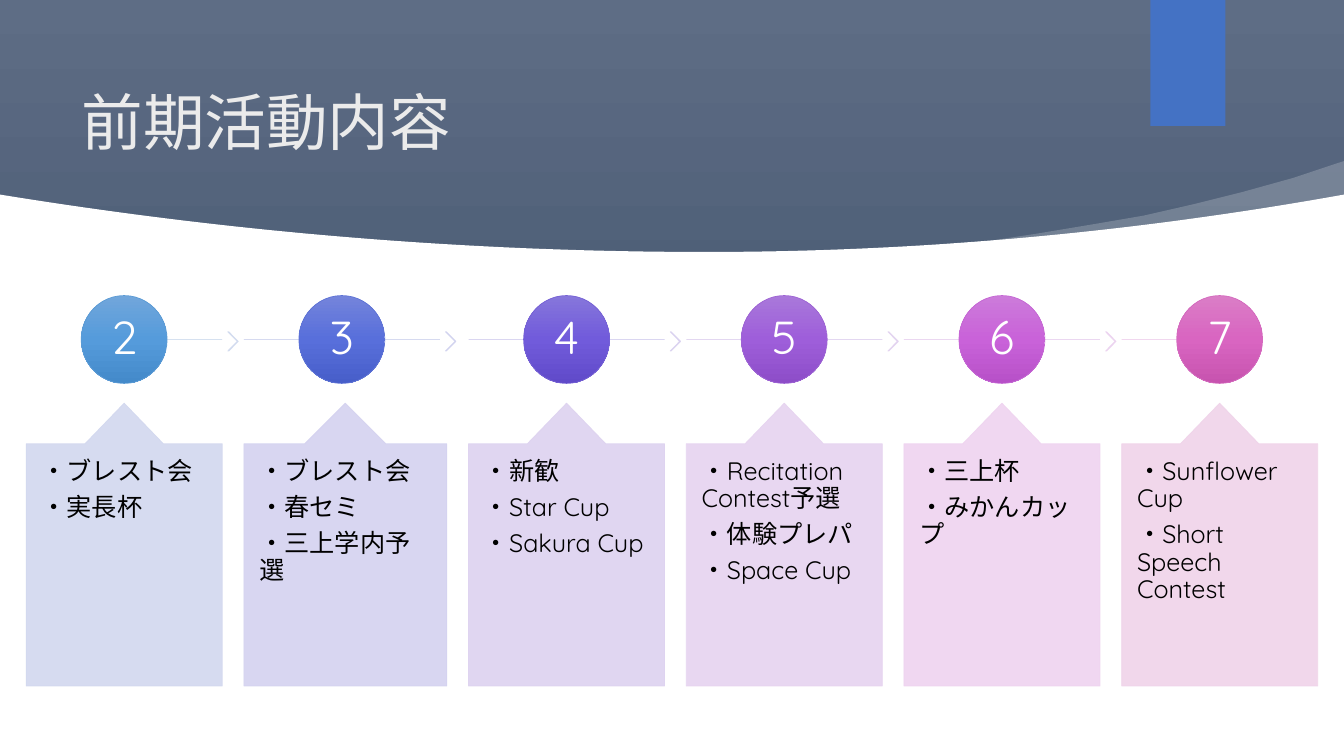
"""Build the slide of first-term activities, month by month."""
import copy
import dataclasses
import typing

import pptx
import pptx.dml.color
import pptx.dml.fill
import pptx.enum.shapes
import pptx.enum.text
import pptx.oxml
import pptx.oxml.ns
import pptx.shapes.autoshape
import pptx.shapes.shapetree
import pptx.slide
import pptx.text.text
import pptx.util

Pt = pptx.util.Pt
Kind = pptx.enum.shapes.MSO_SHAPE
Align = pptx.enum.text.PP_ALIGN
Anchor = pptx.enum.text.MSO_ANCHOR
Shape = pptx.shapes.autoshape.Shape
Tree = pptx.shapes.shapetree.SlideShapes
Points = list[tuple[float, float]]

WIDE, HIGH = 960, 540
LEFT, GAP = 18.7, 15.5
MID = 70
AXIS = 242.5


@dataclasses.dataclass(frozen=True)
class Month:
    name: str
    items: tuple[str, ...]
    shades: tuple[str, str, str]
    edge: str
    rail: str
    arrow: str
    card: str
    width: float = 140


MONTHS = [
    Month("2", ("・ブレスト会", "・実長杯"),
          ("71A6DB", "559BDB", "448ACA"), "5B9BD5", "D2DEEF", "D2DBEF", "D2D8EF"),
    Month("3", ("・ブレスト会", "・春セミ", "・三上学内予選"),
          ("7484DB", "586FDB", "475EC9"), "5E73D5", "D2D6EF", "D2D3EF", "D4D2F0", 145),
    Month("4", ("・新歓", "・Star Cup", "・Sakura Cup"),
          ("8676DB", "715BDB", "604AC9"), "7561D5", "D7D2F0", "DAD2F0", "DDD2F0"),
    Month("5", ("・Recitation Contest予選", "・体験プレパ", "・Space Cup"),
          ("A978DA", "9E5EDA", "8D4DC8"), "9E64D4", "E0D3F0", "E3D3F0", "E6D3F0"),
    Month("6", ("・三上杯", "・みかんカップ"),
          ("CC7BDA", "C962D9", "B750C8"), "C567D4", "E9D3F0", "ECD3F0", "EFD3F0"),
    Month("7", ("・Sunflower Cup", "・Short Speech Contest"),
          ("DA7DC6", "D965C1", "C753AF"), "D46ABE", "F0D3EE", "", "F0D3E9"),
]


def tint(color: pptx.dml.color.ColorFormat, code: str) -> None:
    color.rgb = pptx.dml.color.RGBColor.from_string(code)


def paint(shape: Shape, code: str, edge: str = "") -> None:
    shape.shadow.inherit = False
    shape.fill.solid()
    tint(shape.fill.fore_color, code)
    if edge:
        shape.line.width = Pt(0.5)
        tint(shape.line.color, edge)
    else:
        shape.line.fill.background()


def fade(shape: typing.Any, share: int) -> None:
    for node in shape._element.spPr.iter(pptx.oxml.ns.qn("a:srgbClr")):
        alpha = pptx.oxml.parse_xml(
            f'<a:alpha {pptx.oxml.ns.nsdecls("a")} val="{share * 1000}"/>')
        node.append(alpha)


def blend(shape: Shape, shades: tuple[str, str, str]) -> None:
    shape.fill.gradient()
    shape.fill.gradient_angle = 270
    stops = shape._element.spPr.find(".//" + pptx.oxml.ns.qn("a:gsLst"))
    stops.insert(1, copy.deepcopy(stops[0]))
    for stop, place, code in zip(shape.fill.gradient_stops, (0, 0.5, 1), shades):
        stop.position = place
        tint(stop.color, code)


def block(tree: Tree, kind: Kind, x: float, y: float, w: float, h: float) -> Shape:
    return tree.add_shape(kind, Pt(x), Pt(y), Pt(w), Pt(h))


def trace(tree: Tree, points: Points) -> Shape:
    spots = [(Pt(x), Pt(y)) for x, y in points]
    pen = tree.build_freeform(*spots[0], scale=1.0)
    pen.add_line_segments(spots[1:], close=True)
    return pen.convert_to_shape()


def write(shape: Shape, lines: tuple[str, ...], face: str, size: float, code: str,
          align: Align, anchor: Anchor, after: float = 0) -> None:
    frame = shape.text_frame
    frame.word_wrap = True
    frame.vertical_anchor = anchor
    frame.text = "\n".join(lines)
    for line in frame.paragraphs:
        line.alignment = align
        line.line_spacing = 0.9
        line.space_after = Pt(after)
        line.font.name = face
        line.font.size = Pt(size)
        tint(line.font.color, code)


def inset(shape: Shape, side: float, top: float, base: float) -> None:
    frame = shape.text_frame
    frame.margin_left = frame.margin_right = Pt(side)
    frame.margin_top, frame.margin_bottom = Pt(top), Pt(base)


def draw_head(slide: pptx.slide.Slide) -> None:
    tree = slide.shapes
    back = block(tree, Kind.RECTANGLE, 0, 0, WIDE, HIGH)
    paint(back, "495A73")
    blend(back, ("5E6D85", "495A73", "35445A"))

    gleam = trace(tree, [
        (960, 115), (924, 127), (888, 137), (852, 146), (817, 154), (782, 160),
        (740, 167), (687, 175), (690, 180), (800, 174), (880, 165), (960, 153)])
    paint(gleam, "FFFFFF")
    fade(gleam, 20)

    title = tree.title
    back._element.getparent().append(title._element)
    title.left, title.top, title.width, title.height = map(Pt, (51, 49.5, 728.5, 80))
    write(title, ("前期活動内容",), "Calibri", 44, "EBEBEB", Align.LEFT, Anchor.MIDDLE)

    paint(block(tree, Kind.RECTANGLE, 821.8, 0, 53.5, 90), "4472C4")

    low, depth, base = 504, 41, 180
    curve = [(x, base - depth * ((x - low) / (low if x < low else WIDE - low)) ** 2)
             for x in range(0, WIDE + 1, 12)]
    paint(trace(tree, curve + [(WIDE, HIGH), (0, HIGH)]), "FFFFFF")


def draw_month(tree: Tree, month: Month, x: float) -> None:
    first, last = month is MONTHS[0], month is MONTHS[-1]
    start = x + (78 if first else 0)
    end = x + (MID if last else 140)
    rail = tree.add_connector(pptx.enum.shapes.MSO_CONNECTOR.STRAIGHT,
                              Pt(start), Pt(AXIS), Pt(end), Pt(AXIS))
    rail.line.width = Pt(0.5)
    tint(rail.line.color, month.rail)
    fade(rail, 90)
    rail._element.spPr.append(
        pptx.oxml.parse_xml(f'<a:effectLst {pptx.oxml.ns.nsdecls("a")}/>'))

    if month.arrow:
        arrow = block(tree, Kind.CHEVRON, x + 144, 237, 7.5, 13.7)
        arrow.adjustments[0] = 0.9
        paint(arrow, month.arrow, month.arrow)
        fade(arrow, 90)

    disc = block(tree, Kind.OVAL, x + MID - 30.7, AXIS - 31.4, 61.4, 62.8)
    paint(disc, month.edge, month.edge)
    blend(disc, month.shades)
    inset(disc, 0, 0, 0)
    write(disc, (month.name,), "Quicksand", 33, "FFFFFF", Align.CENTER, Anchor.MIDDLE)

    w, peak, eave, foot = month.width, 288, 317, 490
    card = trace(tree, [
        (x, eave), (x + 0.3 * w, eave), (x + 0.5 * w, peak), (x + 0.7 * w, eave),
        (x + w, eave), (x + w, foot), (x, foot)])
    paint(card, month.card, month.card)
    fade(card, 90)
    inset(card, 11, 39.7, 13)
    write(card, month.items, "Quicksand", 18, "000000", Align.LEFT, Anchor.TOP, 6.3)


def main() -> None:
    deck = pptx.Presentation()
    deck.slide_width, deck.slide_height = Pt(WIDE), Pt(HIGH)
    slide = deck.slides.add_slide(deck.slide_layouts[5])
    draw_head(slide)
    x = LEFT
    for month in MONTHS:
        draw_month(slide.shapes, month, x)
        x += month.width + GAP
    deck.save("out.pptx")


if __name__ == "__main__":
    main()
